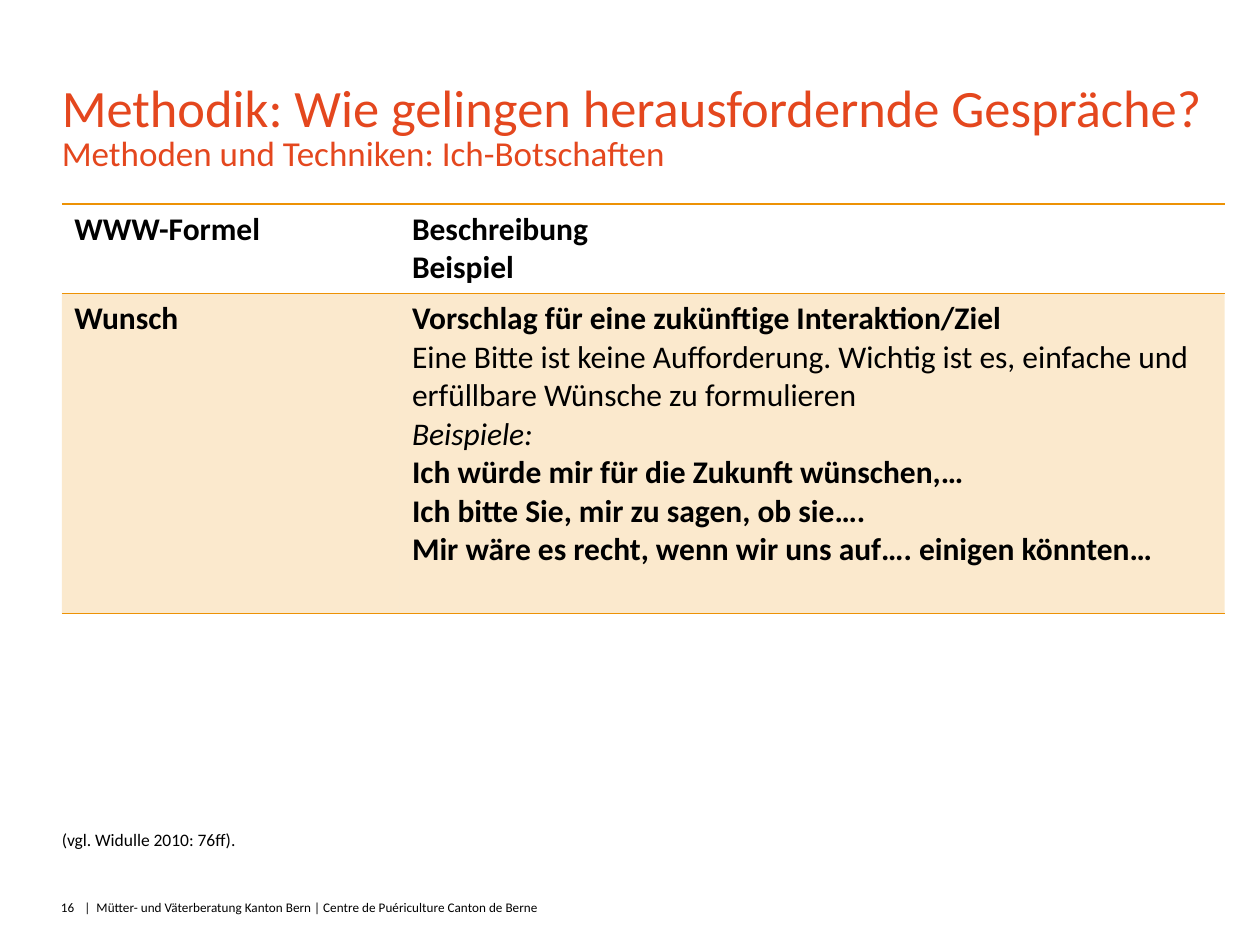
from dataclasses import dataclass

from lxml import etree
from pptx import Presentation
from pptx.dml.color import RGBColor
from pptx.enum.text import MSO_ANCHOR, MSO_AUTO_SIZE, PP_ALIGN
from pptx.oxml.ns import qn
from pptx.util import Inches, Pt

TOP = MSO_ANCHOR.TOP
NO_AUTOFIT = MSO_AUTO_SIZE.NONE
LEFT, RIGHT = PP_ALIGN.LEFT, PP_ALIGN.RIGHT
TWO_CONTENT_LAYOUT = 3


@dataclass(frozen=True)
class Theme:
    font: str = "Calibri"
    heading: RGBColor = RGBColor(0xE4, 0x47, 0x1E)
    text: RGBColor = RGBColor(0, 0, 0)
    accent: RGBColor = RGBColor(0xED, 0x92, 0x05)
    tint_percent: int = 20
    title_size: float = 30
    subtitle_size: float = 20
    table_size: float = 18
    source_size: float = 10
    footer_size: float = 7.5


THEME = Theme()

# Page grid in inches
MARGIN = 0.49
CONTENT_WIDTH = 9.23
COLUMN_WIDTHS = (2.68, CONTENT_WIDTH - 2.68)
ROW_HEIGHTS = (0.71, 2.54)
TABLE_TOP = 1.62
FOOTER_TOP = 7.14

# Each table paragraph is a text and its style
HEADER = (
    [("WWW-Formel", "bold")],
    [("Beschreibung", "bold"), ("Beispiel", "bold")],
)
WISH = (
    [("Wunsch", "bold")],
    [
        ("Vorschlag für eine zukünftige Interaktion/Ziel", "bold"),
        ("Eine Bitte ist keine Aufforderung. Wichtig ist es, einfache und "
         "erfüllbare Wünsche zu formulieren", "plain"),
        ("Beispiele:", "italic"),
        ("Ich würde mir für die Zukunft wünschen,…", "bold"),
        ("Ich bitte Sie, mir zu sagen, ob sie….", "bold"),
        ("Mir wäre es recht, wenn wir uns auf…. einigen könnten…", "bold"),
    ],
)


def style_font(font, size, color, style="plain"):
    font.name = THEME.font
    font.size = Pt(size)
    font.color.rgb = color
    font.bold = style == "bold"
    font.italic = style == "italic"


def write_line(shape, box, text, size, color, alignment=LEFT, line_spacing=1.0):
    """Place a text shape and fill it with a single unbulleted paragraph."""
    shape.left, shape.top, shape.width, shape.height = map(Inches, box)
    frame = shape.text_frame
    frame.text = text
    frame.word_wrap = True
    frame.auto_size = NO_AUTOFIT
    frame.vertical_anchor = TOP
    frame.margin_left = frame.margin_right = 0
    frame.margin_top = frame.margin_bottom = 0
    paragraph = frame.paragraphs[0]
    properties = paragraph._p.get_or_add_pPr()
    properties.set("marL", "0")
    properties.set("indent", "0")
    etree.SubElement(properties, qn("a:buNone"))
    paragraph.alignment = alignment
    paragraph.line_spacing = line_spacing
    paragraph.space_before = Pt(0)
    style_font(paragraph.runs[0].font, size, color)


def add_footer_text(slide, left, width, text, alignment):
    box = (left, FOOTER_TOP, width, 0.13)
    shape = slide.shapes.add_textbox(*map(Inches, box))
    write_line(shape, box, text, THEME.footer_size, THEME.text, alignment)


def set_borders(cell):
    """Rule the cell above and below, with open sides."""
    properties = cell._tc.get_or_add_tcPr()
    for side in ("lnL", "lnR", "lnT", "lnB"):
        line = etree.SubElement(properties, qn(f"a:{side}"), w=str(Pt(1)))
        if side in ("lnL", "lnR"):
            etree.SubElement(line, qn("a:noFill"))
        else:
            fill = etree.SubElement(line, qn("a:solidFill"))
            etree.SubElement(fill, qn("a:srgbClr"), val=str(THEME.accent))


def set_tint(cell):
    cell.fill.solid()
    cell.fill.fore_color.rgb = THEME.accent
    color = cell._tc.tcPr.find(f"{qn('a:solidFill')}/{qn('a:srgbClr')}")
    etree.SubElement(color, qn("a:alpha"), val=str(THEME.tint_percent * 1000))


def fill_cell(cell, lines, tinted):
    set_borders(cell)
    if tinted:
        set_tint(cell)
    else:
        cell.fill.background()
    cell.text_frame.text = "\n".join(text for text, _ in lines)
    for paragraph, (_, style) in zip(cell.text_frame.paragraphs, lines):
        style_font(paragraph.runs[0].font, THEME.table_size, THEME.text, style)


def add_formula_table(slide):
    table = slide.shapes.add_table(
        len(ROW_HEIGHTS), len(COLUMN_WIDTHS), Inches(MARGIN), Inches(TABLE_TOP),
        Inches(CONTENT_WIDTH), Inches(sum(ROW_HEIGHTS))).table
    table.first_row = table.horz_banding = False
    for column, width in zip(table.columns, COLUMN_WIDTHS):
        column.width = Inches(width)
    for row, height, contents in zip(table.rows, ROW_HEIGHTS, (HEADER, WISH)):
        row.height = Inches(height)
        for cell, lines in zip(row.cells, contents):
            fill_cell(cell, lines, tinted=contents is WISH)


def main():
    presentation = Presentation()
    presentation.slide_width, presentation.slide_height = Inches(10), Inches(7.5)
    slide = presentation.slides.add_slide(
        presentation.slide_layouts[TWO_CONTENT_LAYOUT])
    title, subtitle, source = slide.placeholders

    # Headings and source reference
    write_line(title, (MARGIN, 0.66, CONTENT_WIDTH, 0.43),
               "Methodik: Wie gelingen herausfordernde Gespräche?",
               THEME.title_size, THEME.heading, line_spacing=0.88)
    write_line(subtitle, (MARGIN, 1.04, CONTENT_WIDTH, 0.35),
               "Methoden und Techniken: Ich-Botschaften",
               THEME.subtitle_size, THEME.heading)
    write_line(source, (MARGIN, 6.58, CONTENT_WIDTH, 0.2),
               "(vgl. Widulle 2010: 76ff).", THEME.source_size, THEME.text)

    # Footer
    add_footer_text(slide, 0.31, 0.28, "16", RIGHT)
    add_footer_text(
        slide, 0.67, 5.55,
        "|\u00a0\u00a0Mütter- und Väterberatung Kanton Bern | "
        "Centre de Puériculture Canton de Berne", LEFT)

    add_formula_table(slide)
    presentation.save("out.pptx")


if __name__ == "__main__":
    main()
